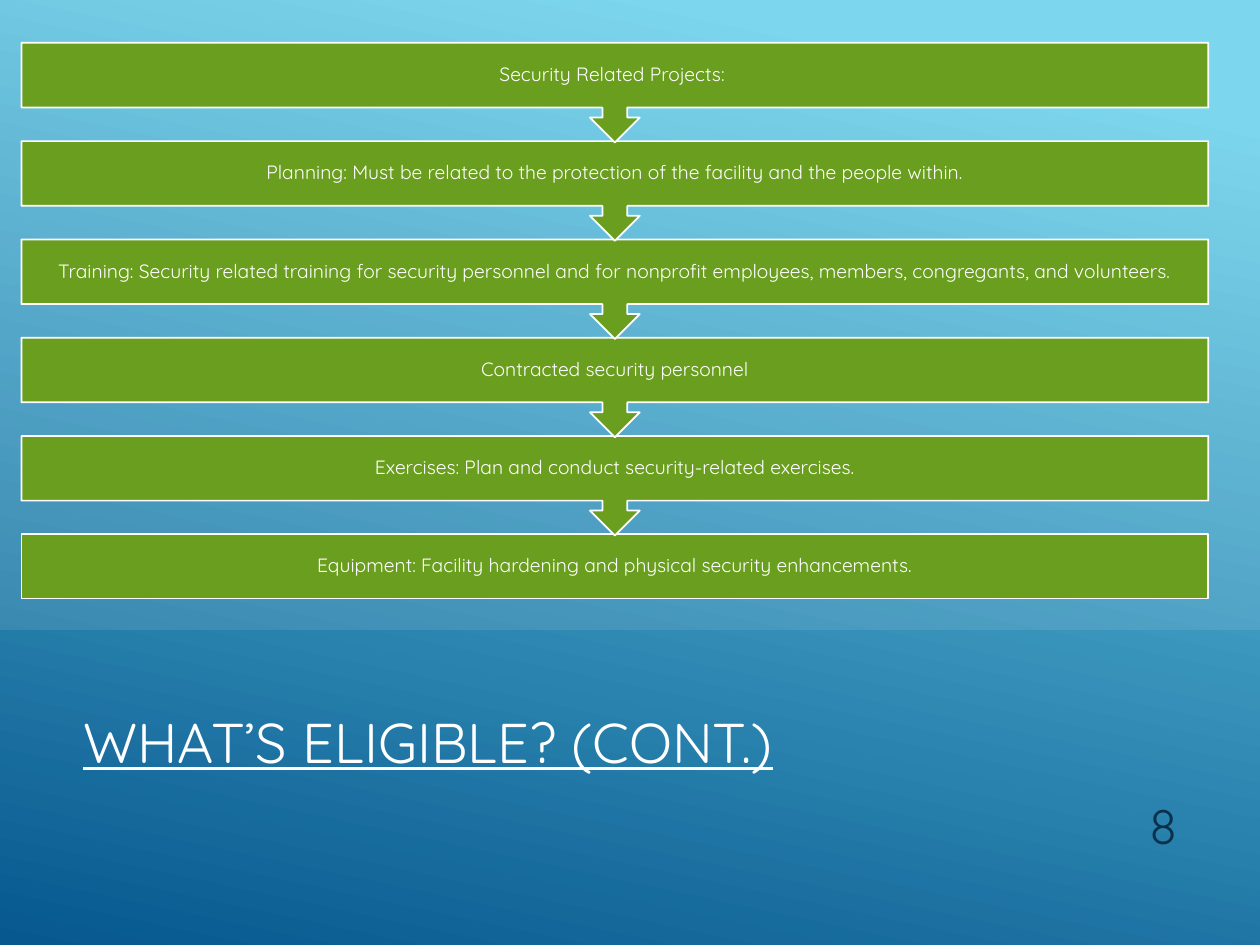
from lxml.etree import SubElement
from pptx import Presentation
from pptx.dml.color import RGBColor as Rgb
from pptx.enum.shapes import MSO_SHAPE as Kind
from pptx.enum.text import MSO_ANCHOR as Anchor, PP_ALIGN as Align
from pptx.oxml.ns import qn
from pptx.util import Inches, Pt

THEME = {
    "font": "Quicksand",
    "white": Rgb.from_string("FFFFFF"),
    "green": Rgb.from_string("6A9E1F"),
    "navy": Rgb.from_string("0A304A"),
    "sky": Rgb.from_string("6ED2EB"),
    "deep": Rgb.from_string("06588E"),
    "title": Pt(32), "page": Pt(28), "step": Pt(11),
}
STEPS = [
    "Security Related Projects: ",
    "Planning: Must be related to the protection of the facility and the people within.",
    "Training: Security related training for security personnel and for nonprofit "
    "employees, members, congregants, and volunteers.",
    "Contracted security personnel",
    "Exercises: Plan and conduct security-related exercises.",
    "Equipment: Facility hardening and physical security enhancements.",
]


def add(kind, left, top, wide, high):
    shape = slide.shapes.add_shape(
        kind, Inches(left), Inches(top), Inches(wide), Inches(high))
    shape.shadow.inherit = False
    shape.line.fill.background()
    return shape


def write(shape, text, size, color, align, anchor):
    frame = shape.text_frame
    frame.text = text
    frame.word_wrap = True
    frame.vertical_anchor = anchor
    para = frame.paragraphs[0]
    para.alignment = align
    font = para.runs[0].font
    font.name, font.size = THEME["font"], THEME[size]
    font.color.rgb = THEME[color]
    return para


deck = Presentation()
deck.slide_width, deck.slide_height = Inches(10), Inches(7.5)
slide = deck.slides.add_slide(deck.slide_layouts[5])

# Backdrop, kept behind the title
back = add(Kind.RECTANGLE, 0, 0, 10, 7.5)
back.fill.gradient()
back.fill.gradient_angle = 360 - 102
for stop, place, name in zip(back.fill.gradient_stops, (0.1, 1), ("sky", "deep")):
    stop.position, stop.color.rgb = place, THEME[name]
title = slide.shapes.title
title.element.addprevious(back.element)

title.left, title.top = Inches(0.56), Inches(5.25)
title.width, title.height = Inches(7.6), Inches(1.26)
para = write(title, "WHAT’S ELIGIBLE? (CONT.)", "title", "white",
             Align.LEFT, Anchor.MIDDLE)
para.runs[0].font.underline = True

# Pale veil over the upper two thirds
veil = add(Kind.SNIP_2_DIAG_RECTANGLE, 0, 0, 10, 5)
veil.adjustments[0] = veil.adjustments[1] = 0
veil.fill.solid()
veil.fill.fore_color.rgb = THEME["white"]
tint = veil.element.spPr.find(qn("a:solidFill"))[0]
SubElement(tint, qn("a:alpha"), val="10000")

page = slide.shapes.add_textbox(Inches(8.5), Inches(6.1), Inches(0.94), Inches(0.73))
para = write(page, "8", "page", "navy", Align.RIGHT, Anchor.BOTTOM)
para.space_after = Pt(6)

# Steps, last one first so that each arrow tip lies over the next box
last = len(STEPS) - 1
for row in range(last, -1, -1):
    kind, high = ((Kind.RECTANGLE, 0.51) if row == last
                  else (Kind.DOWN_ARROW_CALLOUT, 0.79))
    step = add(kind, 0.17, 0.34 + 0.78 * row, 9.42, high)
    step.fill.solid()
    step.fill.fore_color.rgb = THEME["green"]
    step.line.color.rgb = THEME["white"]
    step.line.width = Pt(1)
    para = write(step, STEPS[row], "step", "white", Align.CENTER, Anchor.MIDDLE)
    para.line_spacing = 0.9
    frame = step.text_frame
    frame.margin_left = frame.margin_right = Inches(0.09)
    frame.margin_top = frame.margin_bottom = Inches(0.09)

deck.save("out.pptx")
